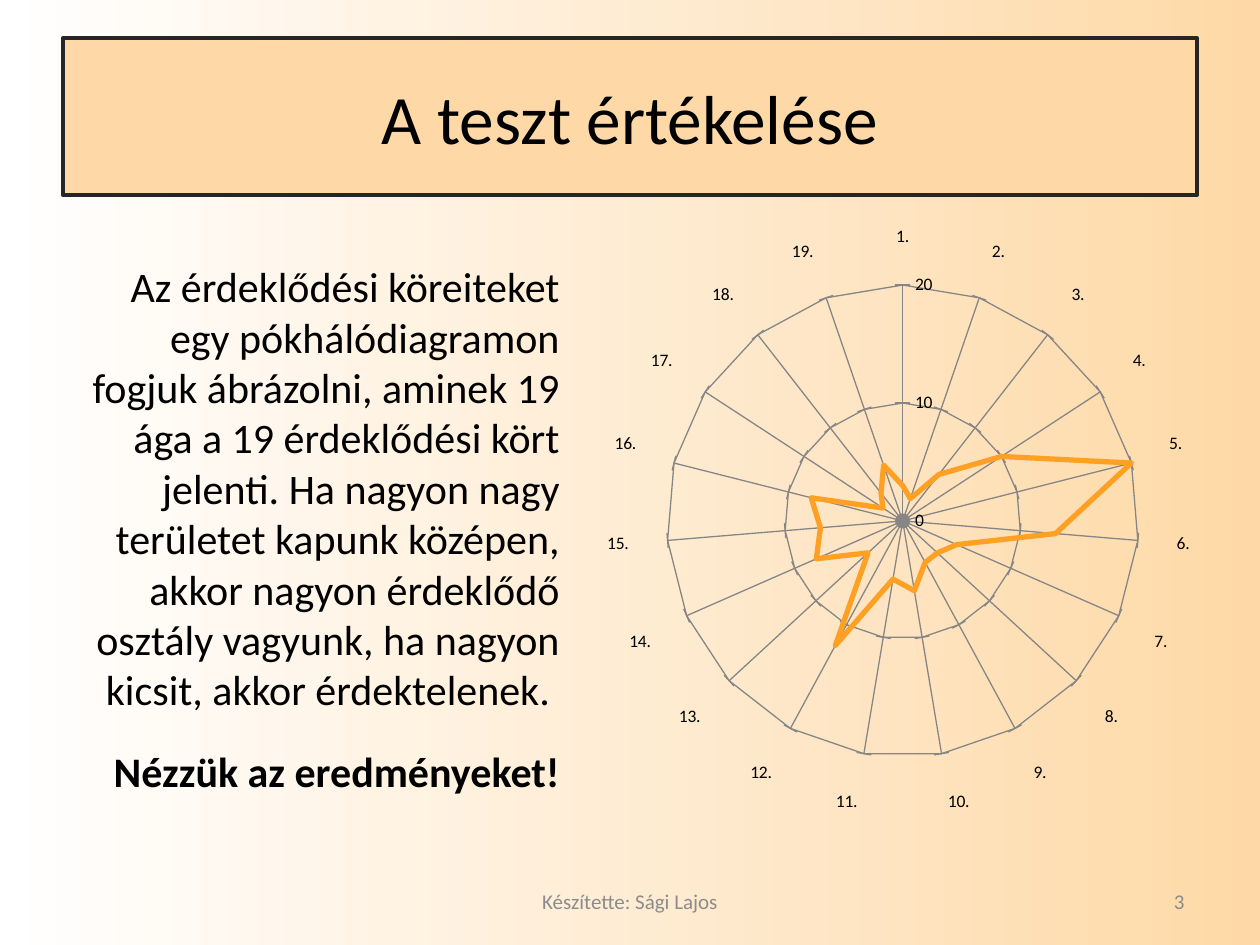
from dataclasses import dataclass

import pptx
import pptx.chart.data
import pptx.dml.color
import pptx.enum.chart
import pptx.enum.shapes
import pptx.enum.text
import pptx.util

Pt = pptx.util.Pt
Align = pptx.enum.text.PP_ALIGN
Anchor = pptx.enum.text.MSO_ANCHOR
Tick = pptx.enum.chart.XL_TICK_MARK


def rgb(code: str) -> pptx.dml.color.RGBColor:
    return pptx.dml.color.RGBColor.from_string(code)


@dataclass(frozen=True)
class Theme:
    font: str = "Calibri"
    text: str = "000000"
    muted: str = "8C8C8C"
    white: str = "FFFFFF"
    peach: str = "FED9A7"
    border: str = "262626"
    series: str = "FDA023"
    grid: str = "868686"
    title_size: float = 39.6
    body_size: float = 24
    small_size: float = 12
    chart_size: float = 10


THEME = Theme()


@dataclass(frozen=True)
class Box:
    left: float
    top: float
    width: float
    height: float

    def lengths(self) -> list:
        return [Pt(n) for n in (self.left, self.top, self.width, self.height)]


@dataclass(frozen=True)
class Line:
    text: str
    bold: bool = False
    space_before: float = 0


@dataclass(frozen=True)
class TextBlock:
    box: Box
    lines: tuple[Line, ...]
    size: float
    align: Align
    color: str = THEME.text
    anchor: Anchor = Anchor.MIDDLE
    framed: bool = False


BLOCKS = (
    TextBlock(Box(36, 21.6, 648, 90), (Line("A teszt értékelése"),),
              THEME.title_size, Align.CENTER, framed=True),
    TextBlock(Box(246, 500.5, 228, 28.75), (Line("Készítette: Sági Lajos"),),
              THEME.small_size, Align.CENTER, THEME.muted),
    TextBlock(Box(516, 500.5, 168, 28.75), (Line("3"),),
              THEME.small_size, Align.RIGHT, THEME.muted),
    TextBlock(
        Box(42.5, 145.5, 284.4, 316),
        (
            Line("Az érdeklődési köreiteket egy pókhálódiagramon fogjuk "
                 "ábrázolni, aminek 19 ága a 19 érdeklődési kört jelenti. "
                 "Ha nagyon nagy területet kapunk középen, akkor nagyon "
                 "érdeklődő osztály vagyunk, ha nagyon kicsit, akkor "
                 "érdektelenek. "),
            Line("Nézzük az eredményeket!", bold=True, space_before=18),
        ),
        THEME.body_size, Align.RIGHT, anchor=Anchor.TOP),
)

CHART_BOX = Box(337.7, 122.4, 351.4, 348.5)
SCORES = (3, 2, 5, 10, 20, 13, 5, 4, 4, 6, 5, 12, 4, 8, 7, 8, 2, 3, 5)


def apply(target, values: dict) -> None:
    for name, value in values.items():
        setattr(target, name, value)


def set_font(font, size: float, color: str, bold: bool = False) -> None:
    apply(font, {"name": THEME.font, "size": Pt(size), "bold": bold})
    font.color.rgb = rgb(color)


def set_line(line, color: str, width: float) -> None:
    line.color.rgb = rgb(color)
    line.width = Pt(width)


def paint_background(page) -> None:
    fill = page.background.fill
    fill.gradient()
    fill.gradient_angle = 0
    for stop, color in zip(fill.gradient_stops, (THEME.white, THEME.peach)):
        stop.color.rgb = rgb(color)


def add_text(page, block: TextBlock) -> None:
    if block.framed:
        rectangle = pptx.enum.shapes.MSO_SHAPE.RECTANGLE
        box = page.shapes.add_shape(rectangle, *block.box.lengths())
        box.shadow.inherit = False
        box.fill.solid()
        box.fill.fore_color.rgb = rgb(THEME.peach)
        set_line(box.line, THEME.border, 2)
    else:
        box = page.shapes.add_textbox(*block.box.lengths())
    frame = box.text_frame
    apply(frame, {"word_wrap": True, "vertical_anchor": block.anchor})
    for index, line in enumerate(block.lines):
        para = frame.add_paragraph() if index else frame.paragraphs[0]
        apply(para, {"alignment": block.align,
                     "space_before": Pt(line.space_before)})
        span = para.add_run()
        span.text = line.text
        set_font(span.font, block.size, block.color, line.bold)


def add_radar(page) -> None:
    data = pptx.chart.data.CategoryChartData(number_format="General")
    data.categories = [f"{n}." for n in range(1, len(SCORES) + 1)]
    data.add_series("Series 1", SCORES)
    kind = pptx.enum.chart.XL_CHART_TYPE.RADAR
    chart = page.shapes.add_chart(kind, *CHART_BOX.lengths(), data).chart
    apply(chart, {"has_legend": False, "has_title": False})
    set_font(chart.font, THEME.chart_size, THEME.text)

    plot = chart.plots[0]
    plot.vary_by_categories = False
    series = plot.series[0]
    series.smooth = False
    set_line(series.format.line, THEME.series, 3)

    apply(chart.value_axis, {"minimum_scale": 0, "maximum_scale": 20,
                             "major_unit": 10})
    for axis, tick in ((chart.category_axis, Tick.OUTSIDE),
                       (chart.value_axis, Tick.CROSS)):
        apply(axis, {"has_major_gridlines": True, "major_tick_mark": tick,
                     "minor_tick_mark": Tick.NONE})
        apply(axis.tick_labels, {"number_format": "General",
                                 "number_format_is_linked": False})
        for line in (axis.format.line, axis.major_gridlines.format.line):
            set_line(line, THEME.grid, 0.75)


def main() -> None:
    deck = pptx.Presentation()
    apply(deck, {"slide_width": Pt(720), "slide_height": Pt(540)})
    page = deck.slides.add_slide(deck.slide_layouts[6])
    paint_background(page)
    for block in BLOCKS:
        add_text(page, block)
    add_radar(page)
    deck.save("out.pptx")


if __name__ == "__main__":
    main()
